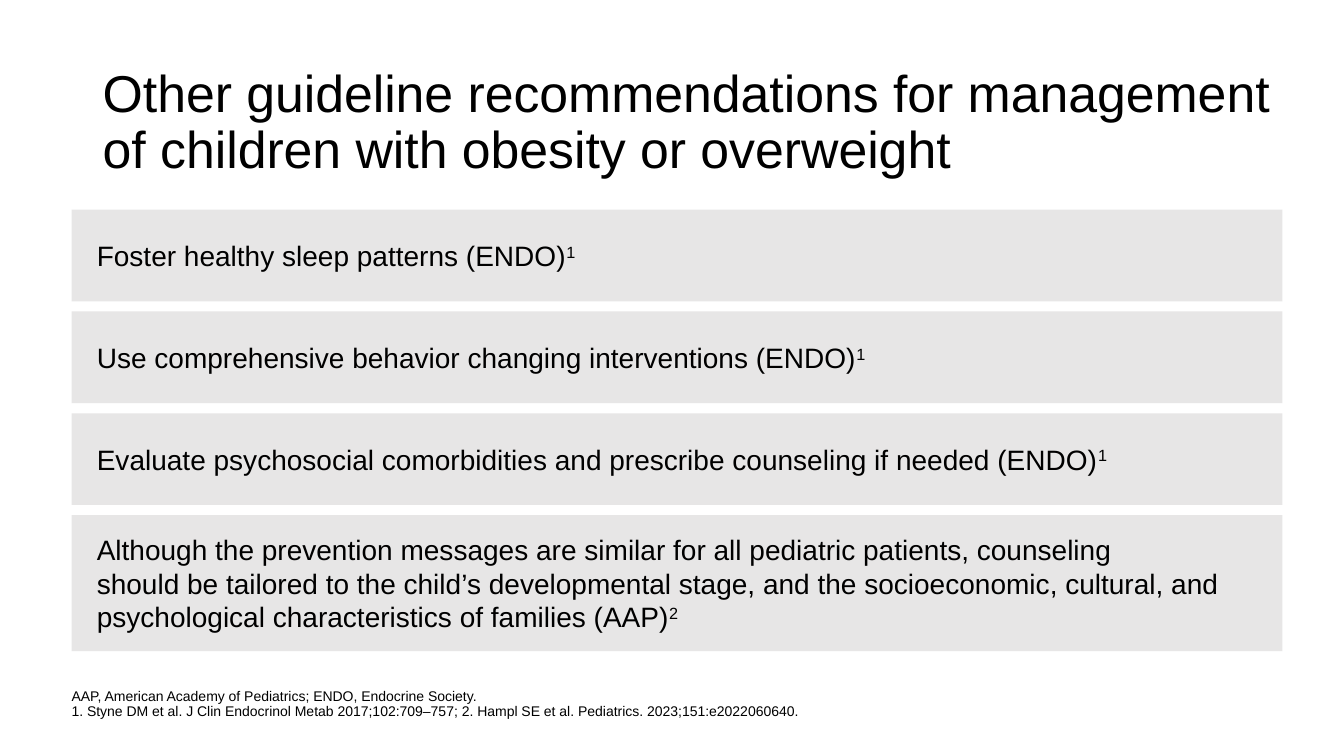
from pptx import Presentation
from pptx.dml.color import RGBColor
from pptx.enum.shapes import MSO_SHAPE
from pptx.enum.text import MSO_ANCHOR, PP_ALIGN
from pptx.util import Inches, Pt

BLACK = RGBColor(0x00, 0x00, 0x00)
GREY = RGBColor(0xE7, 0xE6, 0xE6)
FONT = "Arial"

TITLE = "Other guideline recommendations for management of children with obesity or overweight"
ADVICE = [
    ("Foster healthy sleep patterns (ENDO)", "1", 0.91),
    ("Use comprehensive behavior changing interventions (ENDO)", "1", 0.91),
    ("Evaluate psychosocial comorbidities and prescribe counseling if needed (ENDO)", "1", 0.91),
    ("Although the prevention messages are similar for all pediatric patients, counseling\n"
     "should be tailored to the child’s developmental stage, and the socioeconomic, cultural, "
     "and psychological characteristics of families (AAP)", "2", 1.35),
]
SOURCES = (
    "AAP, American Academy of Pediatrics; ENDO, Endocrine Society.\n"
    "1. Styne DM et al. J Clin Endocrinol Metab 2017;102:709–757; "
    "2. Hampl SE et al. Pediatrics. 2023;151:e2022060640."
)


def add_text(para, text, size, raised=False):
    for i, line in enumerate(text.split("\n")):
        if i:
            para.add_line_break()
        run = para.add_run()
        run.text = line
        run.font.name = FONT
        run.font.size = Pt(size)
        run.font.color.rgb = BLACK
        if raised:
            run.font._element.set("baseline", "30000")


def set_frame(shape, anchor, side, edge):
    frame = shape.text_frame
    frame.word_wrap = True
    frame.vertical_anchor = anchor
    frame.margin_left = frame.margin_right = Inches(side)
    frame.margin_top = frame.margin_bottom = Inches(edge)
    para = frame.paragraphs[0]
    para.alignment = PP_ALIGN.LEFT
    return para


def add_title(slide, left, top, width, height):
    box = slide.shapes.add_textbox(Inches(left), Inches(top), Inches(width), Inches(height))
    para = set_frame(box, MSO_ANCHOR.MIDDLE, 0.1, 0.05)
    para.line_spacing = 0.9
    add_text(para, TITLE, 37)


def add_advice(slide, left, top, width, gap):
    for text, note, height in ADVICE:
        bar = slide.shapes.add_shape(
            MSO_SHAPE.RECTANGLE, Inches(left), Inches(top), Inches(width), Inches(height))
        bar.shadow.inherit = False
        bar.fill.solid()
        bar.fill.fore_color.rgb = GREY
        bar.line.fill.background()
        para = set_frame(bar, MSO_ANCHOR.MIDDLE, 0, 0.05)
        para.space_after = Pt(3)
        props = para._p.get_or_add_pPr()
        props.set("marL", str(Inches(0.25)))
        props.set("indent", "0")
        add_text(para, text, 20)
        add_text(para, note, 20, raised=True)
        top += height + gap


def add_sources(slide, left, top, width, height):
    box = slide.shapes.add_textbox(Inches(left), Inches(top), Inches(width), Inches(height))
    para = set_frame(box, MSO_ANCHOR.BOTTOM, 0, 0)
    para.line_spacing = 0.9
    add_text(para, SOURCES, 10)


def main():
    deck = Presentation()
    deck.slide_width = Inches(13.33)
    deck.slide_height = Inches(7.5)
    slide = deck.slides.add_slide(deck.slide_layouts[6])
    add_title(slide, 0.92, 0.5, 12.06, 1.45)
    add_advice(slide, 0.71, 2.08, 12.01, 0.1)
    add_sources(slide, 0.71, 6.79, 9.46, 0.35)
    deck.save("out.pptx")


if __name__ == "__main__":
    main()
